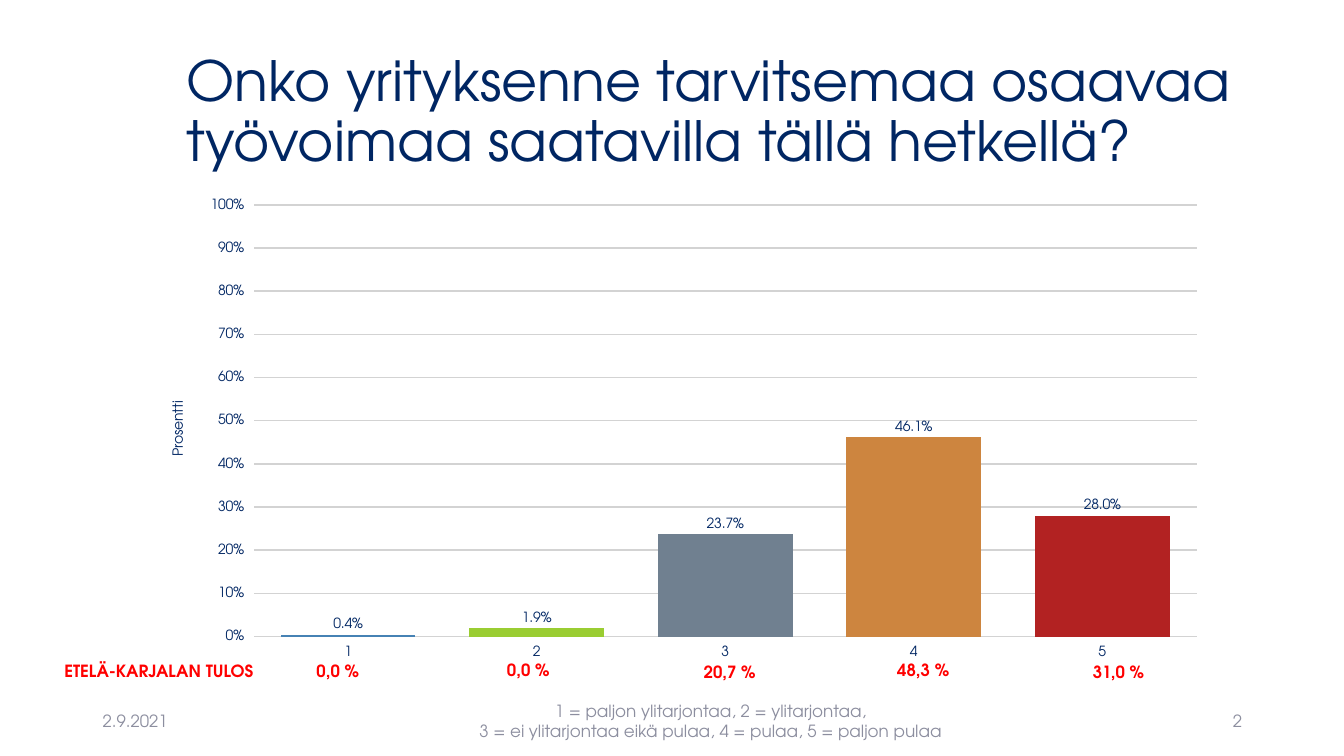
from dataclasses import dataclass

from lxml.etree import SubElement
from pptx import Presentation
from pptx.chart.data import CategoryChartData
from pptx.dml.color import RGBColor
from pptx.enum.chart import XL_CHART_TYPE, XL_LABEL_POSITION
from pptx.enum.text import MSO_ANCHOR, MSO_AUTO_SIZE, PP_ALIGN
from pptx.oxml.ns import qn
from pptx.util import Inches, Pt


@dataclass(frozen=True)
class Theme:
    """Colours, font and type sizes of the slide."""
    font: str = "TeX Gyre Adventor"
    navy: str = "002663"
    muted: str = "8C8E9F"
    red: str = "FF0000"
    grid: str = "D3D3D3"
    bars: tuple = ("4682B4", "9ACD32", "708090", "CD853F", "B22222")
    title_size: float = 39.6
    body_size: float = 12
    chart_size: float = 10


def style_font(font, name, size, color, bold=False):
    """Apply face, size, colour and weight to a font."""
    font.name, font.size, font.bold = name, Pt(size), bold
    font.color.rgb = RGBColor.from_string(color)


def write_text(frame, text, *, name, size, color, bold=False,
               align=PP_ALIGN.LEFT, spacing=1.0):
    """Write one paragraph per line of text in the given format."""
    for index, line in enumerate(text.split("\n")):
        paragraph = frame.add_paragraph() if index else frame.paragraphs[0]
        paragraph.alignment, paragraph.line_spacing = align, spacing
        run = paragraph.add_run()
        run.text = line
        style_font(run.font, name, size, color, bold)


class SurveySlide:
    """Builds the elements of one survey slide in a theme."""

    def __init__(self, slide, theme):
        self.slide, self.theme = slide, theme

    def text(self, content, box, *, anchor=MSO_ANCHOR.MIDDLE, fit=False, **style):
        """Add a text box that wraps, or one that fits its text."""
        frame = self.slide.shapes.add_textbox(*map(Inches, box)).text_frame
        frame.word_wrap = not fit
        frame.auto_size = MSO_AUTO_SIZE.SHAPE_TO_FIT_TEXT if fit else MSO_AUTO_SIZE.NONE
        frame.vertical_anchor = anchor
        write_text(frame, content, name=self.theme.font, **style)

    def footer(self, content, left, width, align):
        """Add a muted text to the footer line."""
        self.text(content, (left, 6.95, width, 0.4), size=self.theme.body_size,
                  color=self.theme.muted, align=align)

    def regional_result(self, content, left, top, width):
        """Add a red regional figure below the chart."""
        self.text(content, (left, top, width, 0.3), anchor=MSO_ANCHOR.TOP, fit=True,
                  size=self.theme.body_size, color=self.theme.red, bold=True)

    def column_chart(self, categories, shares, axis_title, box):
        """Add a column chart of shares with one colour per column."""
        theme = self.theme
        data = CategoryChartData()
        data.categories = categories
        data.add_series("Series 1", shares)
        chart = self.slide.shapes.add_chart(
            XL_CHART_TYPE.COLUMN_CLUSTERED, *map(Inches, box), data).chart
        style_font(chart.font, theme.font, theme.chart_size, theme.navy)
        chart.has_legend = chart.has_title = False
        for axis in (chart.category_axis, chart.value_axis):
            axis.format.line.fill.background()
            style_font(axis.tick_labels.font, theme.font, theme.chart_size, theme.navy)

        percent = chart.value_axis
        percent.minimum_scale, percent.maximum_scale, percent.major_unit = 0, 1, 0.1
        percent.tick_labels.number_format = "0%"
        percent.tick_labels.number_format_is_linked = False
        gridline = percent.major_gridlines.format.line
        gridline.width = Pt(1)
        gridline.color.rgb = RGBColor.from_string(theme.grid)
        write_text(percent.axis_title.text_frame, axis_title, name=theme.font,
                   size=theme.chart_size, color=theme.navy, align=PP_ALIGN.CENTER)

        plot = chart.plots[0]
        plot.gap_width, plot.vary_by_categories = 40, False
        plot.has_data_labels = True
        labels = plot.data_labels
        labels.show_value, labels.position = True, XL_LABEL_POSITION.OUTSIDE_END
        labels.number_format, labels.number_format_is_linked = "0.0%", False
        style_font(labels.font, theme.font, theme.chart_size, theme.navy)
        series = plot.series[0]
        for index, color in enumerate(theme.bars):
            fill = series.points[index].format.fill
            fill.solid()
            fill.fore_color.rgb = RGBColor.from_string(color)
        self.place_plot(chart, x=0.097, y=0.032, w=0.883, h=0.9)

    def place_plot(self, chart, **fractions):
        """Fix the inner plot area as fractions of the chart."""
        area = chart.element.find(".//" + qn("c:plotArea"))
        layout = area.find(qn("c:layout"))
        if layout is None:
            layout = SubElement(area, qn("c:layout"))
            area.insert(0, layout)
        manual = SubElement(layout, qn("c:manualLayout"))
        settings = {"layoutTarget": "inner", "xMode": "edge", "yMode": "edge", **fractions}
        for tag, value in settings.items():
            SubElement(manual, qn("c:" + tag)).set("val", str(value))


def main():
    """Build and save the labour supply slide."""
    deck = Presentation()
    deck.slide_width, deck.slide_height = Inches(13.33), Inches(7.5)
    theme = Theme()
    survey = SurveySlide(deck.slides.add_slide(deck.slide_layouts[6]), theme)

    survey.text("Onko yrityksenne tarvitsemaa osaavaa työvoimaa saatavilla tällä hetkellä?",
                (1.75, 0.4, 10.59, 1.45), size=theme.title_size, color=theme.navy,
                spacing=0.9)
    survey.footer("2.9.2021", 0.92, 3, PP_ALIGN.LEFT)
    survey.footer("1 = paljon ylitarjontaa, 2 = ylitarjontaa,\n"
                  "3 = ei ylitarjontaa eikä pulaa, 4 = pulaa, 5 = paljon pulaa",
                  4.41, 5.28, PP_ALIGN.CENTER)
    survey.footer("2", 9.42, 3, PP_ALIGN.RIGHT)
    survey.column_chart(("1", "2", "3", "4", "5"), (0.004, 0.019, 0.237, 0.461, 0.28),
                        "Prosentti", (1.49, 1.88, 10.59, 4.76))

    regional_results = (
        ("ETELÄ-KARJALAN TULOS", 0.54, 6.51, 2.14),
        ("0,0 %", 3.04, 6.51, 0.65),
        ("0,0 %", 4.93, 6.5, 0.65),
        ("20,7 %", 6.88, 6.52, 0.81),
        ("48,3 %", 8.8, 6.5, 0.81),
        ("31,0 %", 10.74, 6.52, 0.81),
    )
    for result in regional_results:
        survey.regional_result(*result)
    deck.save("out.pptx")


if __name__ == "__main__":
    main()
